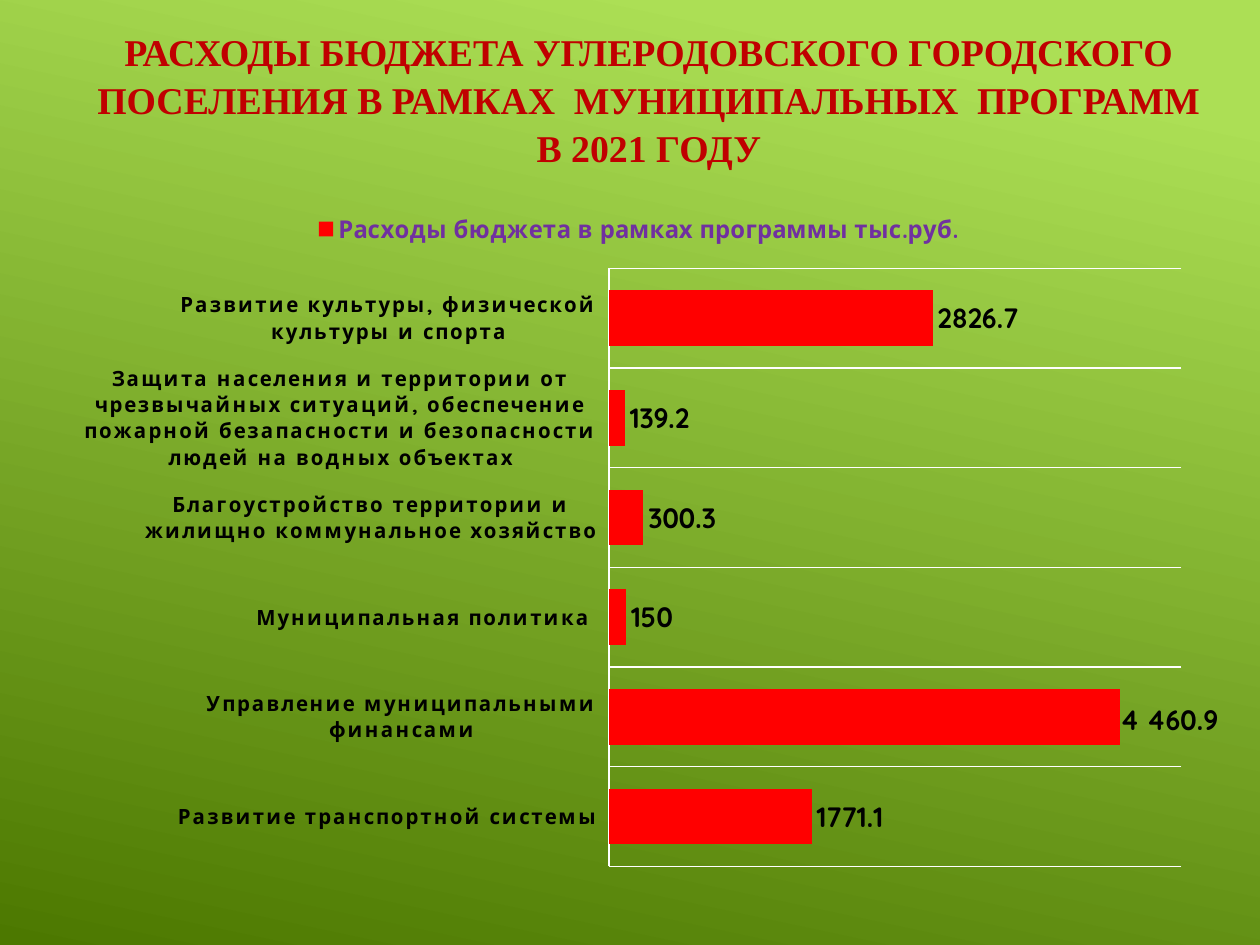
from lxml.etree import SubElement, Element
from pptx import Presentation
from pptx.chart.data import CategoryChartData
from pptx.dml.color import RGBColor
from pptx.enum.chart import XL_CHART_TYPE as ChartType
from pptx.enum.chart import XL_LABEL_POSITION as LabelPosition
from pptx.enum.chart import XL_LEGEND_POSITION as LegendPosition
from pptx.enum.chart import XL_TICK_LABEL_POSITION as TickLabels
from pptx.enum.chart import XL_TICK_MARK as TickMark
from pptx.enum.text import MSO_ANCHOR as Anchor
from pptx.enum.text import MSO_AUTO_SIZE as AutoSize
from pptx.enum.text import PP_ALIGN as Align
from pptx.oxml.ns import qn
from pptx.util import Inches, Pt

LIME = RGBColor(0xAC, 0xDF, 0x55)
MOSS = RGBColor(0x4C, 0x78, 0x00)
CRIMSON = RGBColor(0xC0, 0x00, 0x00)
RED = RGBColor(0xFF, 0x00, 0x00)
PURPLE = RGBColor(0x70, 0x30, 0xA0)
BLACK = RGBColor(0x00, 0x00, 0x00)
WHITE = RGBColor(0xFF, 0xFF, 0xFF)

HEADING = (
    "РАСХОДЫ БЮДЖЕТА УГЛЕРОДОВСКОГО ГОРОДСКОГО ПОСЕЛЕНИЯ "
    "В РАМКАХ  МУНИЦИПАЛЬНЫХ  ПРОГРАММ В 2021 ГОДУ"
)
SERIES_NAME = "Расходы бюджета в рамках программы тыс.руб."
EXPENSES = {
    "Развитие транспортной системы": 1771.1,
    "Управление муниципальными финансами": 4460.9,
    "Муниципальная политика ": 150,
    "Благоустройство территории и жилищно коммунальное хозяйство": 300.3,
    "Защита населения и территории от чрезвычайных ситуаций, обеспечение "
    "пожарной безапасности и безопасности людей на водных объектах": 139.2,
    "Развитие культуры, физической культуры и спорта": 2826.7,
}


def apply(target, values):
    for name, value in values.items():
        setattr(target, name, value)


def manual_layout(**values):
    layout = Element(qn("c:layout"))
    manual = SubElement(layout, qn("c:manualLayout"))
    for name, value in values.items():
        SubElement(manual, qn(f"c:{name}")).set("val", str(value))
    return layout


class BudgetSlide:
    chart_font = "Quicksand"
    title_font = "Times New Roman"

    def __init__(self, deck):
        self.slide = deck.slides.add_slide(deck.slide_layouts[5])

    def style(self, font, size, color, name=chart_font, bold=True):
        apply(font, {"size": Pt(size), "name": name, "bold": bold})
        font.color.rgb = color

    def outline(self, line):
        line.color.rgb = WHITE
        line.width = Pt(0.75)

    def background(self):
        fill = self.slide.background.fill
        fill.gradient()
        fill.gradient_angle = 258
        for stop, position, color in zip(fill.gradient_stops, (0.1, 1), (LIME, MOSS)):
            stop.position = position
            stop.color.rgb = color

    def title(self, text, left, top, width, height):
        heading = self.slide.shapes.title
        apply(heading, {"left": Inches(left), "top": Inches(top),
                        "width": Inches(width), "height": Inches(height)})
        frame = heading.text_frame
        frame.text = text
        apply(frame, {"vertical_anchor": Anchor.MIDDLE, "word_wrap": True,
                      "auto_size": AutoSize.NONE})
        paragraph = frame.paragraphs[0]
        apply(paragraph, {"alignment": Align.CENTER, "line_spacing": 1.06})
        self.style(paragraph.runs[0].font, 21.6, CRIMSON, self.title_font)

    def bar_chart(self, expenses, left, top, width, height):
        data = CategoryChartData()
        data.categories = list(expenses)
        data.add_series(SERIES_NAME, list(expenses.values()))
        chart = self.slide.shapes.add_chart(
            ChartType.BAR_CLUSTERED, Inches(left), Inches(top),
            Inches(width), Inches(height), data).chart
        self.style(chart.font, 10, WHITE, bold=False)
        apply(chart, {"has_title": False, "has_legend": True})
        apply(chart.legend, {"position": LegendPosition.TOP, "include_in_layout": False})
        self.style(chart.legend.font, 14, PURPLE)
        self.axes(chart)
        self.bars(chart.plots[0])
        plot_area = chart.plots[0]._element.getparent()
        for old_layout in plot_area.findall(qn("c:layout")):
            plot_area.remove(old_layout)
        plot_area.insert(0, manual_layout(
            layoutTarget="inner", xMode="edge", yMode="edge",
            x=0.473, y=0.101, w=0.519, h=0.871))

    def axes(self, chart):
        programs = chart.category_axis
        apply(programs, {"major_tick_mark": TickMark.NONE,
                         "minor_tick_mark": TickMark.NONE,
                         "tick_label_position": TickLabels.LOW,
                         "has_major_gridlines": True})
        self.outline(programs.format.line)
        self.outline(programs.major_gridlines.format.line)
        self.style(programs.tick_labels.font, 12, BLACK)
        programs._element.find(".//" + qn("a:defRPr")).set("spc", "120")
        apply(chart.value_axis, {"minimum_scale": 0, "maximum_scale": 5000,
                                 "has_major_gridlines": False, "visible": False})

    def bars(self, plot):
        apply(plot, {"gap_width": 79, "vary_by_categories": False})
        series = plot.series[0]
        series.format.fill.solid()
        series.format.fill.fore_color.rgb = RED
        labels = series.data_labels
        apply(labels, {"show_value": True, "position": LabelPosition.OUTSIDE_END})
        self.style(labels.font, 16, BLACK)
        finance = series.points[1].data_label
        self.style(finance.font, 16, BLACK)
        finance.position = LabelPosition.OUTSIDE_END
        index = labels._element.find(".//" + qn("c:idx"))
        number_format = Element(qn("c:numFmt"))
        number_format.set("formatCode", r"#\ ##0.0")
        number_format.set("sourceLinked", "0")
        index.addnext(number_format)
        index.addnext(manual_layout(x=-0.004, y=0.005))


def main():
    deck = Presentation()
    apply(deck, {"slide_width": Inches(10), "slide_height": Inches(7.5)})
    budget = BudgetSlide(deck)
    budget.background()
    budget.title(HEADING, 0.58, 0.33, 9.14, 0.89)
    budget.bar_chart(EXPENSES, 0.67, 1.58, 9, 5.45)
    deck.save("out.pptx")


if __name__ == "__main__":
    main()
